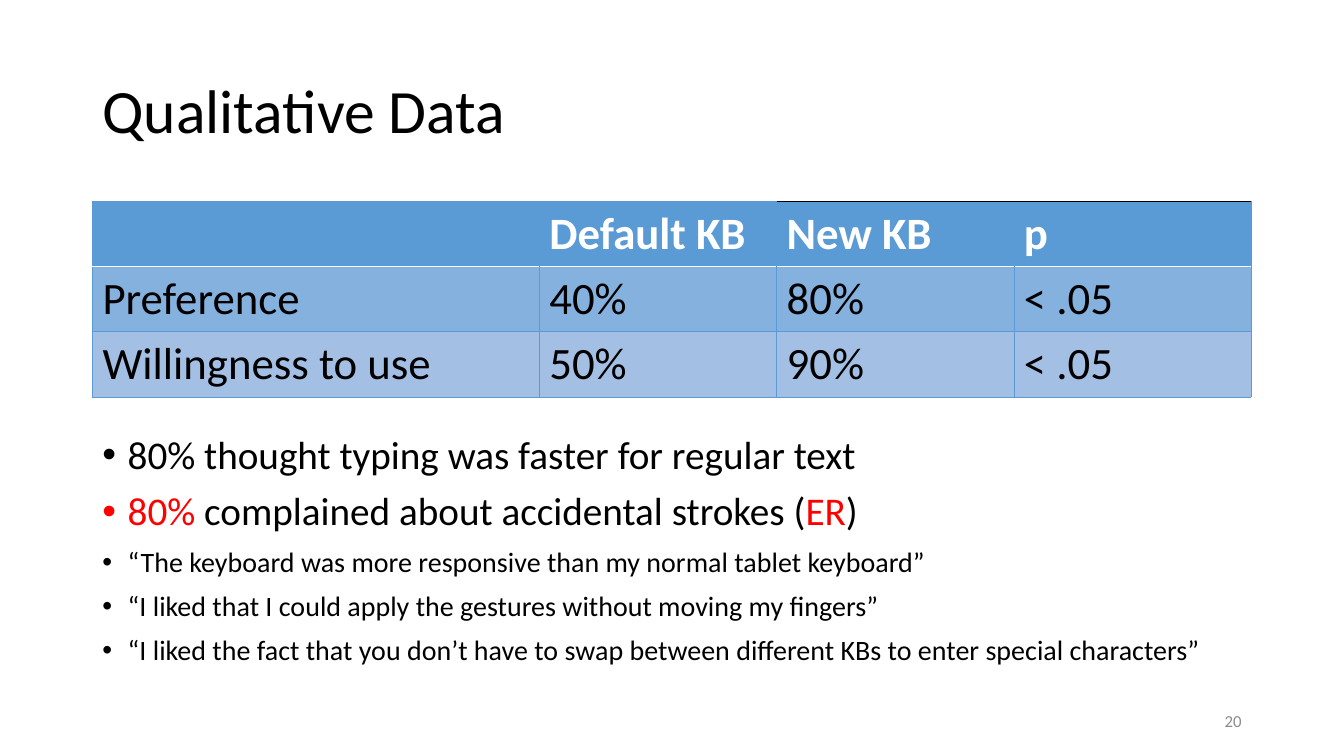
from lxml.etree import SubElement
from pptx import Presentation
from pptx.dml.color import RGBColor
from pptx.enum.text import MSO_ANCHOR as Anchor, MSO_AUTO_SIZE as AutoSize, PP_ALIGN as Align
from pptx.oxml.ns import qn
from pptx.util import Cm, Pt

BLACK, WHITE, RED, BLUE, GREY = "000000", "FFFFFF", "FF0000", "5B9BD5", "8C8C8C"

TITLE = "Qualitative Data"
TABLE = [
    ["", "Default KB", "New KB", "p"],
    ["Preference", "40%", "80%", "< .05"],
    ["Willingness to use", "50%", "90%", "< .05"],
]
ROW_FILLS = [BLUE, "85B1DE", "A3BFE4"]
# Each bullet: size, then (text, colour) runs
BULLETS = [
    (28, [("80% thought typing was faster for regular text", BLACK)]),
    (28, [("80%", RED), (" complained about accidental strokes (", BLACK),
          ("ER", RED), (")", BLACK)]),
    (20, [("“The keyboard was more responsive than my normal tablet keyboard”", BLACK)]),
    (20, [("“I liked that I could apply the gestures without moving my fingers”", BLACK)]),
    (20, [("“I liked the fact that you don’t have to swap between different KBs "
           "to enter special characters”", BLACK)]),
]
PAGE = "20"

LEFT, WIDTH = Cm(2.33), Cm(29.21)
COL_WIDTHS = [Cm(11.26)] + [Cm(5.98)] * 3
ROW_HEIGHT = Cm(1.64)
INDENT = Cm(0.64)


def rgb(color):
    return RGBColor.from_string(color)


def add_text(p, text, size=28, color=BLACK, bold=False):
    r = p.add_run()
    r.text = text
    r.font.name = "Calibri"
    r.font.size = Pt(size)
    r.font.bold = bold
    r.font.color.rgb = rgb(color)


def add_bullet(p):
    pPr = p._p.get_or_add_pPr()
    pPr.set("marL", str(INDENT))
    pPr.set("indent", str(-INDENT))
    SubElement(pPr, qn("a:buFont"), typeface="Arial")
    SubElement(pPr, qn("a:buChar"), char="•")


def set_border(cell, side, color, width):
    ln = SubElement(cell._tc.get_or_add_tcPr(), qn(f"a:ln{side}"), w=str(Pt(width)))
    if color is None:
        SubElement(ln, qn("a:noFill"))
    else:
        fill = SubElement(ln, qn("a:solidFill"))
        SubElement(fill, qn("a:srgbClr"), val=color)


def cell_borders(row, col):
    """Side, colour and width of a cell's borders, in schema order."""
    thin, none, rule = (BLUE, 0.5), (None, 0), (WHITE, 1)
    if row > 0:
        return {"L": thin, "R": thin, "T": rule if row == 1 else thin, "B": thin}
    return {
        "L": thin if col == 0 else none,
        "R": thin if col == len(COL_WIDTHS) - 1 else none,
        "T": thin if col < 2 else (BLACK, 1),
        "B": rule,
    }


prs = Presentation()
prs.slide_width, prs.slide_height = Cm(33.87), Cm(19.05)
s = prs.slides.add_slide(prs.slide_layouts[5])

# Title
title = s.shapes.title
title.left, title.top, title.width, title.height = LEFT, Cm(1.01), WIDTH, Cm(3.68)
tf = title.text_frame
tf.auto_size = AutoSize.NONE
tf.vertical_anchor = Anchor.MIDDLE
p = tf.paragraphs[0]
p.alignment = Align.LEFT
p.line_spacing = 0.9
add_text(p, TITLE, size=44)

# Bullets
sp = s.shapes.add_textbox(LEFT, Cm(10.85), WIDTH, Cm(6.32))
tf = sp.text_frame
tf.word_wrap = True
for i, (size, runs) in enumerate(BULLETS):
    p = tf.add_paragraph() if i else tf.paragraphs[0]
    p.line_spacing = 0.9
    p.space_before = Pt(10 if i else 0)
    add_bullet(p)
    for text, color in runs:
        add_text(p, text, size=size, color=color)

# Page number
sp = s.shapes.add_textbox(Cm(23.92), Cm(17.66), Cm(7.62), Cm(1.01))
tf = sp.text_frame
tf.word_wrap = True
tf.vertical_anchor = Anchor.MIDDLE
p = tf.paragraphs[0]
p.alignment = Align.RIGHT
add_text(p, PAGE, size=12, color=GREY)

# Table
table = s.shapes.add_table(len(TABLE), len(COL_WIDTHS), LEFT, Cm(5.08),
                           WIDTH, ROW_HEIGHT * len(TABLE)).table
table.horz_banding = False
for column, width in zip(table.columns, COL_WIDTHS):
    column.width = width
for r, values in enumerate(TABLE):
    table.rows[r].height = ROW_HEIGHT
    for c, text in enumerate(values):
        cell = table.cell(r, c)
        for side, (color, width) in cell_borders(r, c).items():
            set_border(cell, side, color, width)
        cell.fill.solid()
        cell.fill.fore_color.rgb = rgb(ROW_FILLS[r])
        if text:
            add_text(cell.text_frame.paragraphs[0], text, size=32,
                     color=BLACK if r else WHITE, bold=r == 0)

prs.save("out.pptx")
